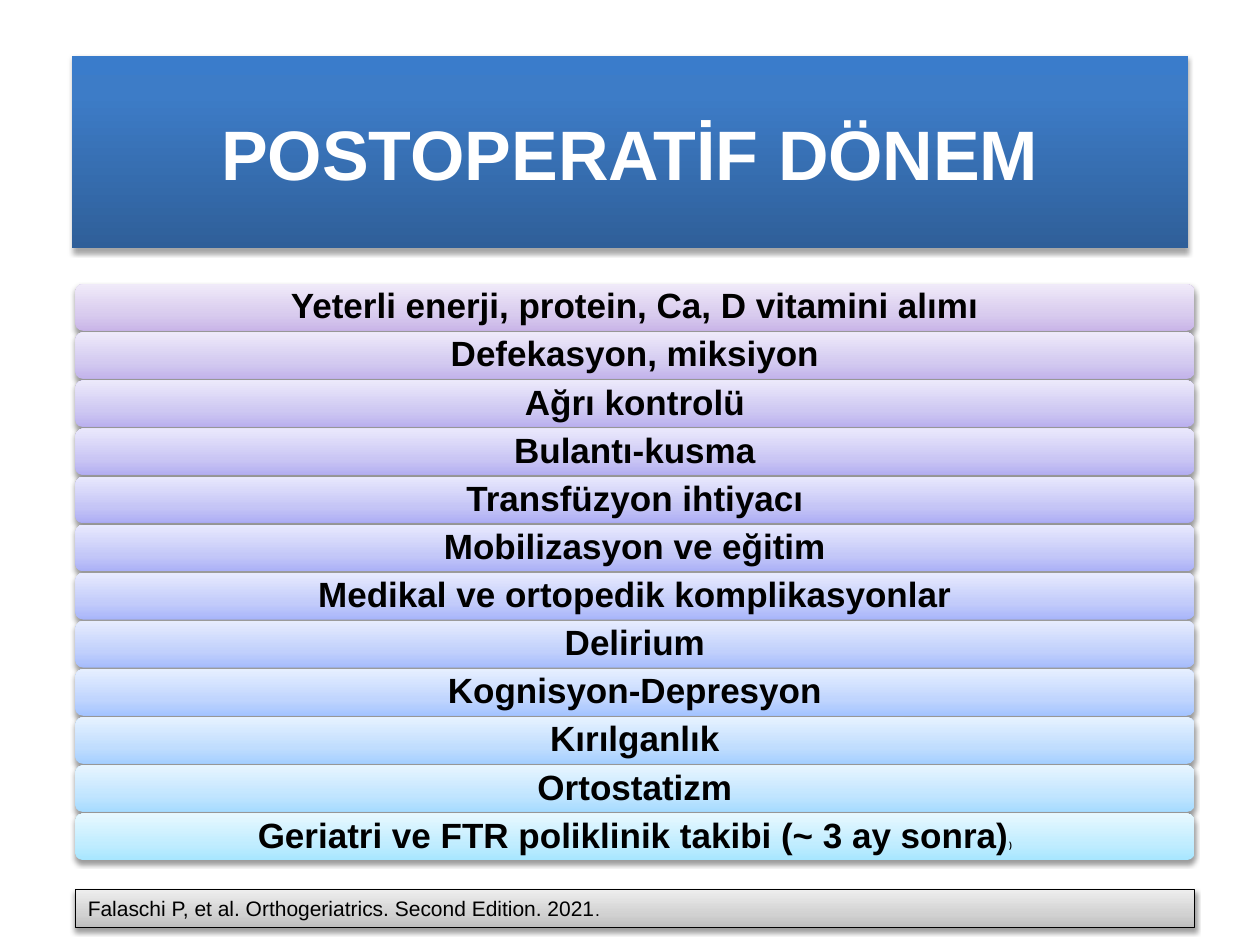
from copy import deepcopy

from pptx import Presentation
from pptx.dml.color import RGBColor
from pptx.enum.shapes import MSO_SHAPE
from pptx.enum.text import MSO_ANCHOR, PP_ALIGN
from pptx.oxml import parse_xml
from pptx.oxml.ns import nsdecls, qn
from pptx.util import Cm, Pt

RECTANGLE = MSO_SHAPE.RECTANGLE
ROUNDED = MSO_SHAPE.ROUNDED_RECTANGLE
MIDDLE, TOP = MSO_ANCHOR.MIDDLE, MSO_ANCHOR.TOP
CENTER, LEFT = PP_ALIGN.CENTER, PP_ALIGN.LEFT

COLORS = {
    "text": "000000",
    "title_text": "FFFFFF",
    "shadow": "000000",
    "line": "000000",
    "title": ("2F5F99", "3D7CC7", "3A7CCB"),
    "source": ("BDBDBD", "D1D1D1", "EEEEEE"),
    "topics": {
        0: ("C9B5E8", "D8CBEE", "F0EAF9"),
        4: ("ACACF4", "C5C5F6", "E8E8FD"),
        6: ("A8B5FA", "C2CBFA", "E7EAFE"),
        8: ("A4C4FF", "C0D5FE", "E6EFFF"),
        11: ("A7E6FF", "C1EDFF", "E7F8FF"),
    },
}

TITLE_FORMAT = {"name": "Arial", "size": Pt(40), "bold": True}
TOPIC_FORMAT = {"name": "Arial", "size": Pt(20), "bold": True}
TOPIC_END_FORMAT = {"name": "Arial", "size": Pt(5), "bold": True}
SOURCE_FORMAT = {"name": "Arial", "size": Pt(12), "bold": False}
SOURCE_END_FORMAT = {"name": "Arial", "size": Pt(10), "bold": False}

TOPICS = [
    "Yeterli enerji, protein, Ca, D vitamini alımı",
    "Defekasyon, miksiyon",
    "Ağrı kontrolü",
    "Bulantı-kusma",
    "Transfüzyon ihtiyacı",
    "Mobilizasyon ve eğitim",
    "Medikal ve ortopedik komplikasyonlar",
    "Delirium",
    "Kognisyon-Depresyon",
    "Kırılganlık",
    "Ortostatizm",
    "Geriatri ve FTR poliklinik takibi (~ 3 ay sonra)",
]
TOPIC_LEFT, TOPIC_TOP, TOPIC_WIDTH = 1.52, 5.73, 22.56
TOPIC_HEIGHT, TOPIC_PITCH = 0.94, 0.97


def blend(start, end, share):
    """Return the hex colour that lies at a share of the way from start to end."""
    pairs = zip(bytes.fromhex(start), bytes.fromhex(end))
    return "".join(f"{round(a + (b - a) * share):02X}" for a, b in pairs)


def topic_colors(index):
    """Return the three gradient colours of a topic bar."""
    anchors = COLORS["topics"]
    lower = max(key for key in anchors if key <= index)
    upper = min(key for key in anchors if key >= index)
    share = (index - lower) / max(upper - lower, 1)
    return [blend(a, b, share) for a, b in zip(anchors[lower], anchors[upper])]


def set_gradient(box, colors, middle):
    """Fill a box with three colours running from bottom to top."""
    box.fill.gradient()
    box.fill.gradient_angle = 90
    stop_list = box._element.spPr.find(".//" + qn("a:gsLst"))
    stop_list.append(deepcopy(stop_list[0]))
    for stop, color, position in zip(box.fill.gradient_stops, colors, (0, middle, 1)):
        stop.color.rgb = RGBColor.from_string(color)
        stop.position = position


def set_shadow(box, distance, opacity):
    """Give a box a soft shadow below it."""
    box.shadow.inherit = False
    box._element.spPr.find(qn("a:effectLst")).append(parse_xml(
        f'<a:outerShdw {nsdecls("a")} blurRad="{Pt(3.15)}" dist="{Pt(distance)}" '
        f'dir="5400000" rotWithShape="0"><a:srgbClr val="{COLORS["shadow"]}">'
        f'<a:alpha val="{opacity * 1000}"/></a:srgbClr></a:outerShdw>'))


def add_bar(page, kind, place, colors, middle=0.35, distance=1.6, opacity=38):
    """Add a shaded bar without an outline."""
    box = page.shapes.add_shape(kind, *(Cm(length) for length in place))
    set_gradient(box, colors, middle)
    box.line.fill.background()
    set_shadow(box, distance, opacity)
    return box


def write(box, spans, color, anchor=MIDDLE, alignment=CENTER, spacing=1.0):
    """Write one paragraph of formatted spans in a box."""
    frame = box.text_frame
    frame.word_wrap = True
    frame.vertical_anchor = anchor
    para = frame.paragraphs[0]
    para.alignment = alignment
    para.line_spacing = spacing
    for text, values in spans:
        span = para.add_run()
        span.text = text
        span.font.color.rgb = RGBColor.from_string(color)
        for name, value in values.items():
            setattr(span.font, name, value)


def add_title(page):
    """Add the title banner."""
    box = add_bar(page, RECTANGLE, (1.45, 1.13, 22.5, 3.88), COLORS["title"],
                  middle=0.8, distance=1.8, opacity=35)
    write(box, [("POSTOPERATİF DÖNEM", TITLE_FORMAT)], COLORS["title_text"])


def add_topics(page):
    """Add the stack of topic bars."""
    for index, topic in enumerate(TOPICS):
        place = (TOPIC_LEFT, TOPIC_TOP + index * TOPIC_PITCH, TOPIC_WIDTH, TOPIC_HEIGHT)
        box = add_bar(page, ROUNDED, place, topic_colors(index))
        spans = [(topic, TOPIC_FORMAT)]
        if topic == TOPICS[-1]:
            spans.append((")", TOPIC_END_FORMAT))
        write(box, spans, COLORS["text"], spacing=0.9)


def add_source(page):
    """Add the outlined bar that names the literature source."""
    place = (TOPIC_LEFT, 17.93, TOPIC_WIDTH, 0.77)
    box = add_bar(page, RECTANGLE, place, COLORS["source"])
    box.line.color.rgb = RGBColor.from_string(COLORS["line"])
    box.line.width = Pt(0.75)
    spans = [("Falaschi P, et al. Orthogeriatrics. Second Edition. 2021", SOURCE_FORMAT),
             (".", SOURCE_END_FORMAT)]
    write(box, spans, COLORS["text"], TOP, LEFT)


def main():
    """Build the slide and save the deck."""
    deck = Presentation()
    deck.slide_width, deck.slide_height = Cm(25.4), Cm(19.05)
    page = deck.slides.add_slide(deck.slide_layouts[6])
    add_topics(page)
    add_title(page)
    add_source(page)
    deck.save("out.pptx")


if __name__ == "__main__":
    main()
